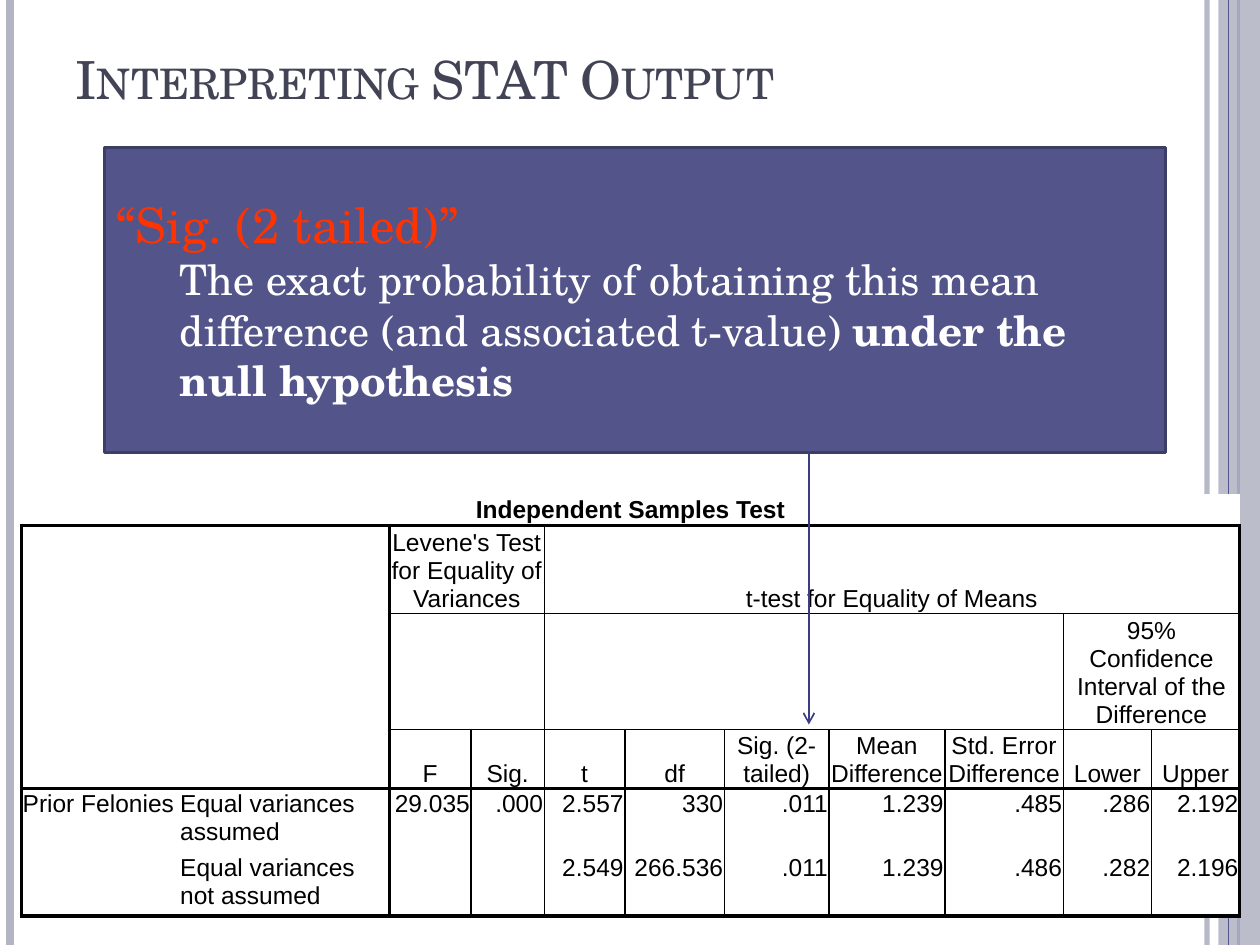
from lxml.etree import SubElement
from pptx import Presentation
from pptx.dml.color import RGBColor
from pptx.enum.shapes import MSO_CONNECTOR as Connector, MSO_SHAPE as Shape
from pptx.enum.text import MSO_ANCHOR as Anchor, PP_ALIGN as Align
from pptx.oxml.ns import qn
from pptx.util import Inches, Pt

THICK, THIN = 2.25, 1
PLAIN_TABLE = "{2D5ABB26-0587-4C30-8999-92F81FD0307C}"
COLUMN_WIDTHS = [1.25, 1.67, 0.65, 0.58, 0.64, 0.79, 0.83, 0.92, 0.94, 0.7, 0.7]
ROW_HEIGHTS = [0.25, 0.7, 0.92, 0.47, 0.51, 0.5]
SPANNING_CELLS = [
    (0, 0, 1, 11, "Independent Samples Test"),
    (1, 2, 1, 2, "Levene's Test for Equality of Variances"),
    (1, 4, 1, 7, "t-test for Equality of Means"),
    (2, 2, 1, 2, ""),
    (2, 4, 1, 5, ""),
    (2, 9, 1, 2, "95% Confidence Interval of the Difference"),
    (4, 0, 2, 1, "Prior Felonies"),
]
SINGLE_ROWS = {
    3: ["", "", "F", "Sig.", "t", "df", "Sig. (2-tailed)", "Mean Difference",
        "Std. Error Difference", "Lower", "Upper"],
    4: ["", "Equal variances assumed", "29.035", ".000", "2.557", "330", ".011",
        "1.239", ".485", ".286", "2.192"],
    5: ["", "Equal variances not assumed", "", "", "2.549", "266.536", ".011",
        "1.239", ".486", ".282", "2.196"],
}


def color(value):
    return RGBColor.from_string(value)


def vertical_edge(row, edge):
    if row == 0:
        return 0
    return {0: THICK, 1: 0, 2: THICK, 11: THICK}.get(edge, THIN)


def horizontal_edge(edge, col):
    inner = THIN if col >= 2 else 0
    return {0: 0, 1: THICK, 4: THICK, 5: 0, 6: THICK}.get(edge, inner)


class SlideBuilder:
    serif, sans = "TeX Gyre Schola", "Arial"
    ink, accent, rail = "424456", "53548A", "B3B4C4"

    def __init__(self, slide):
        self.slide = slide

    def run(self, paragraph, text, size, font, fill, bold=False):
        run = paragraph.add_run()
        run.text = text
        run.font.size = Pt(size)
        run.font.name = font
        run.font.bold = bold
        run.font.color.rgb = color(fill)
        return run

    def opacity(self, fill, percent):
        clr = fill._xPr.find(".//" + qn("a:srgbClr"))
        SubElement(clr, qn("a:alpha"), val=str(percent * 1000))

    def title(self, text):
        title = self.slide.shapes.title
        title.left, title.top = Inches(0.5), Inches(0)
        title.width, title.height = Inches(9), Inches(0.92)
        title.text_frame.vertical_anchor = Anchor.BOTTOM
        paragraph = title.text_frame.paragraphs[0]
        paragraph.alignment = Align.LEFT
        run = self.run(paragraph, text, 30, self.serif, self.ink)
        run.font._element.set("cap", "small")

    def line(self, x, top, bottom, stroke, width, opacity=100, arrow=False):
        line = self.slide.shapes.add_connector(
            Connector.STRAIGHT, Inches(x), Inches(top), Inches(x), Inches(bottom))
        line.line.color.rgb = color(stroke)
        line.line.width = Pt(width)
        if opacity < 100:
            self.opacity(line.line.fill, opacity)
        properties = line._element.spPr
        if arrow:
            SubElement(properties.find(qn("a:ln")), qn("a:tailEnd"), type="arrow")
        SubElement(properties, qn("a:effectLst"))

    def box(self, left, top, width, height, fill, stroke=None, opacity=100):
        box = self.slide.shapes.add_shape(
            Shape.RECTANGLE, Inches(left), Inches(top), Inches(width), Inches(height))
        box.shadow.inherit = False
        box.fill.solid()
        box.fill.fore_color.rgb = color(fill)
        if opacity < 100:
            self.opacity(box.fill, opacity)
        if stroke:
            box.line.color.rgb = color(stroke)
            box.line.width = Pt(2)
        else:
            box.line.fill.background()
        return box

    def callout(self, heading, explanation, emphasis):
        frame = self.box(0.83, 1.17, 8.42, 2.42, self.accent, "3D3E66").text_frame
        frame.word_wrap = True
        frame.vertical_anchor = Anchor.MIDDLE
        term = frame.paragraphs[0]
        term.alignment = Align.LEFT
        self.run(term, heading, 28, self.serif, "FF3300")
        meaning = frame.add_paragraph()
        meaning.alignment = Align.LEFT
        meaning.level = 1
        indent = meaning._p.get_or_add_pPr()
        indent.set("marL", str(Inches(0.5)))
        indent.set("indent", "0")
        self.run(meaning, explanation, 24, self.serif, "FFFFFF")
        self.run(meaning, emphasis, 24, self.serif, "FFFFFF", bold=True)

    def border(self, cell, side, width):
        properties = cell._tc.get_or_add_tcPr()
        edge = SubElement(properties, qn("a:ln" + side), w=str(Pt(width)))
        if width:
            fill = SubElement(edge, qn("a:solidFill"))
            SubElement(fill, qn("a:srgbClr"), val="000000")
        else:
            SubElement(edge, qn("a:noFill"))

    def cell(self, cell, row, col, text):
        end_row, end_col = row + 1, col + 1
        if cell.is_merge_origin:
            end_row, end_col = row + cell.span_height, col + cell.span_width
        self.border(cell, "L", vertical_edge(row, col))
        self.border(cell, "R", vertical_edge(row, end_col))
        self.border(cell, "T", horizontal_edge(row, col))
        self.border(cell, "B", horizontal_edge(end_row, col))
        cell.fill.solid()
        cell.fill.fore_color.rgb = color("FFFFFF")
        cell.margin_left = cell.margin_right = Inches(0.01)
        cell.margin_top = cell.margin_bottom = Inches(0.01)
        if not text:
            return
        paragraph = cell.text_frame.paragraphs[0]
        paragraph.line_spacing = Pt(16)
        if row < 4:
            paragraph.alignment = Align.CENTER
            cell.vertical_anchor = Anchor.BOTTOM if row else Anchor.MIDDLE
        else:
            paragraph.alignment = Align.LEFT if col < 2 else Align.RIGHT
            cell.vertical_anchor = Anchor.TOP
        self.run(paragraph, text, 14, self.sans, "000000", bold=row == 0)

    def table(self, left, top):
        table = self.slide.shapes.add_table(
            len(ROW_HEIGHTS), len(COLUMN_WIDTHS), Inches(left), Inches(top),
            Inches(sum(COLUMN_WIDTHS)), Inches(sum(ROW_HEIGHTS))).table
        table.first_row = table.horz_banding = False
        table._tbl.tblPr.find(qn("a:tableStyleId")).text = PLAIN_TABLE
        for column, width in zip(table.columns, COLUMN_WIDTHS):
            column.width = Inches(width)
        for row, height in zip(table.rows, ROW_HEIGHTS):
            row.height = Inches(height)
        texts = {(row, col): text for row, values in SINGLE_ROWS.items()
                 for col, text in enumerate(values)}
        for row, col, height, width, text in SPANNING_CELLS:
            last = table.cell(row + height - 1, col + width - 1)
            table.cell(row, col).merge(last)
            texts[row, col] = text
        for row in range(len(ROW_HEIGHTS)):
            for col in range(len(COLUMN_WIDTHS)):
                cell = table.cell(row, col)
                if not cell.is_spanned:
                    self.cell(cell, row, col, texts.get((row, col), ""))


def main():
    deck = Presentation()
    deck.slide_width, deck.slide_height = Inches(10), Inches(7.5)
    builder = SlideBuilder(deck.slides.add_slide(deck.slide_layouts[5]))
    builder.line(9.58, 0, 7.5, builder.rail, 3, opacity=93)
    builder.line(0.08, 0, 7.5, builder.rail, 4.5)
    builder.line(9.83, 0, 7.5, builder.accent, 1.5)
    builder.box(9.67, 0, 0.33, 7.5, builder.rail, opacity=87)
    builder.line(9.75, 0, 7.5, builder.accent, 0.75)
    builder.title("Interpreting STAT Output")
    builder.table(0.17, 3.92)
    builder.callout(
        "“Sig. (2 tailed)”",
        "The exact probability of obtaining this mean difference (and associated t-value) ",
        "under the null hypothesis")
    builder.line(6.42, 3.58, 5.75, "3B3D82", 1, arrow=True)
    deck.save("out.pptx")


if __name__ == "__main__":
    main()
